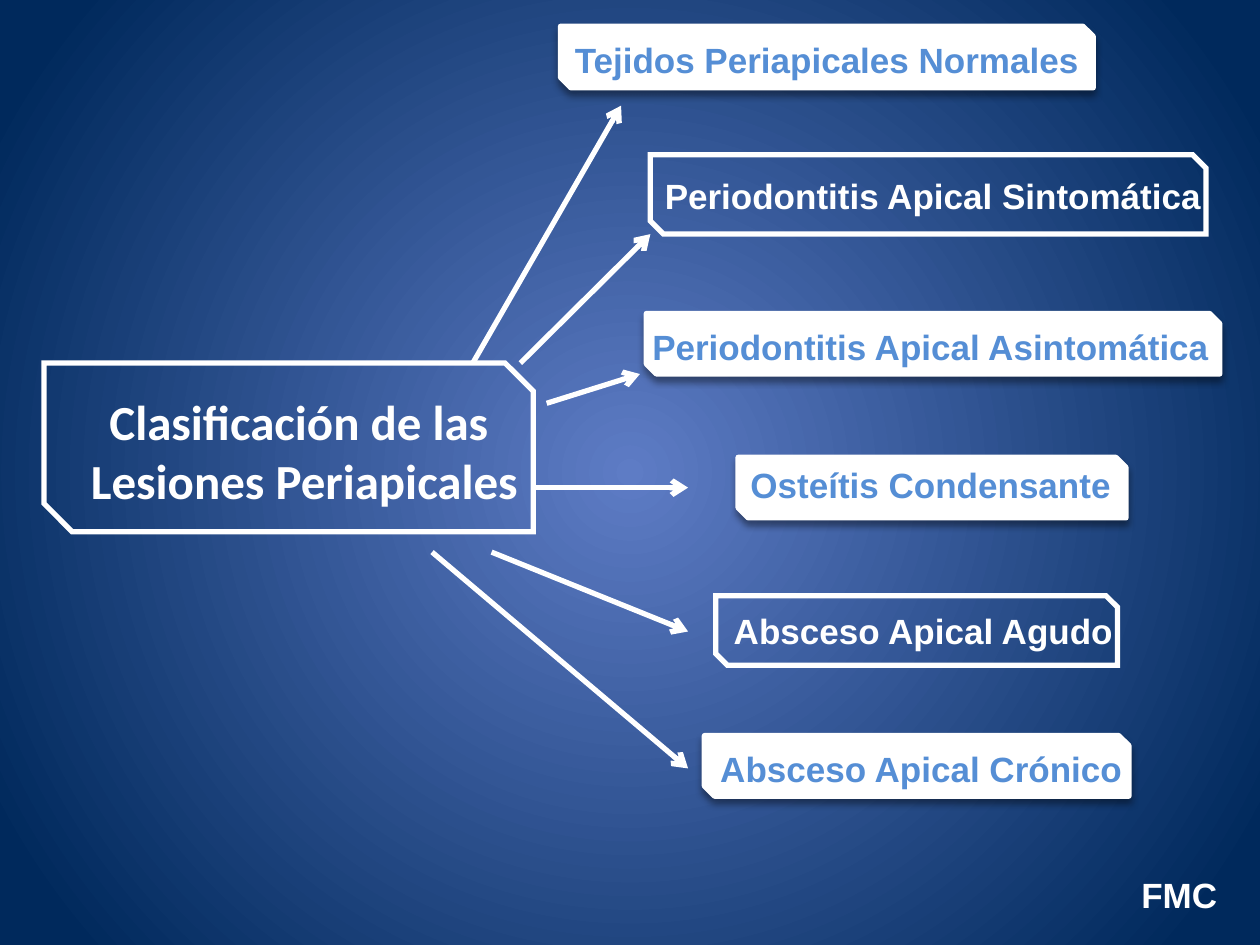
from lxml.etree import SubElement
from pptx import Presentation
from pptx.dml.color import RGBColor
from pptx.enum.shapes import MSO_CONNECTOR, MSO_SHAPE
from pptx.enum.text import MSO_ANCHOR, MSO_AUTO_SIZE, PP_ALIGN
from pptx.oxml.ns import qn
from pptx.util import Cm, Pt

WHITE, BLUE = "FFFFFF", "558ED5"
LEFT, MID, RIGHT = PP_ALIGN.LEFT, PP_ALIGN.CENTER, PP_ALIGN.RIGHT
GLOW = [(0, "5E7CC5"), (0.92, "00295C")]

# Lengths in cm: left, top, width, height
TITLE = {
    "lines": ["Clasificación de las", " Lesiones Periapicales"],
    "box": (0.89, 7.32, 9.86, 3.4),
    "area": (1.3, 7.77, 9.45, 2.64),
}
# Label, solid box, box, text area, alignment, arrow from x, y to x, y
CLASSES = [
    ("Tejidos Periapicales Normales", True, (11.3, 0.53, 10.74, 1.24),
     (11.3, 0.66, 10.74, 1.12), MID, (9.53, 7.32, 12.52, 2.13)),
    ("Periodontitis Apical Sintomática", False, (13.11, 3.12, 11.2, 1.6),
     (13.11, 3.4, 11.4, 1.12), MID, (10.49, 7.32, 13.11, 4.72)),
    ("Periodontitis Apical Asintomática", True, (13.03, 6.32, 11.56, 1.22),
     (12.9, 6.43, 11.81, 1.12), LEFT, (11.02, 8.13, 12.9, 7.54)),
    ("Osteítis Condensante", True, (14.88, 9.22, 7.82, 1.22),
     (14.88, 9.22, 7.82, 1.12), LEFT, (10.8, 9.83, 13.87, 9.83)),
    ("Absceso Apical Agudo", False, (14.43, 12.01, 8.1, 1.4),
     (14.5, 12.17, 8.23, 1.12), MID, (9.91, 11.13, 13.87, 12.73)),
    ("Absceso Apical Crónico", True, (14.2, 14.83, 8.56, 1.22),
     (14.27, 14.94, 8.89, 1.12), LEFT, (8.71, 11.13, 13.87, 15.49)),
]
MARK = ("FMC", (22.58, 17.53, 2.21, 1.02))


def color(code):
    return RGBColor.from_string(code)


def cms(nums):
    return [Cm(n) for n in nums]


def add(node, tag, **attrs):
    return SubElement(node, qn(tag), attrs)


def stroke(item):
    item.line.color.rgb = color(WHITE)
    item.line.width = Pt(3)


def paint(slide):
    """Fill the background with a glow from the centre."""
    fill = slide.background.fill
    fill.gradient()
    for stop, (pos, code) in zip(fill.gradient_stops, GLOW):
        stop.position = pos
        stop.color.rgb = color(code)
    grad = slide.element.find(".//" + qn("a:gradFill"))
    grad.remove(grad.find(qn("a:lin")))
    node = add(grad, "a:path", path="circle")
    add(node, "a:fillToRect", l="50000", t="50000", r="50000", b="50000")


def frame(slide, place, solid=False):
    """Draw a snipped box: white with a shadow, or outline only."""
    box = slide.shapes.add_shape(MSO_SHAPE.SNIP_2_DIAG_RECTANGLE, *cms(place))
    box.shadow.inherit = False
    stroke(box)
    props = box.element.spPr
    if solid:
        box.fill.solid()
        box.fill.fore_color.rgb = color(WHITE)
        shade = add(props.find(qn("a:effectLst")), "a:outerShdw",
                    blurRad=str(Pt(4)), dist=str(Pt(3)), dir="5400000",
                    rotWithShape="0")
        add(add(shade, "a:srgbClr", val="000000"), "a:alpha", val="40000")
    else:
        box.fill.background()
        add(props.find(qn("a:ln")), "a:miter", lim="800000")


def write(slide, lines, place, code, align=MID, size=20, name="Arial", **form):
    frame = slide.shapes.add_textbox(*cms(place)).text_frame
    look = {"word_wrap": False, "auto_size": MSO_AUTO_SIZE.SHAPE_TO_FIT_TEXT}
    for key, val in {**look, **form}.items():
        setattr(frame, key, val)
    for num, line in enumerate(lines):
        para = frame.add_paragraph() if num else frame.paragraphs[0]
        para.alignment = align
        run = para.add_run()
        run.text = line
        for key, val in {"size": Pt(size), "name": name, "bold": True}.items():
            setattr(run.font, key, val)
        run.font.color.rgb = color(code)


def arrow(slide, ends):
    link = slide.shapes.add_connector(MSO_CONNECTOR.STRAIGHT, *cms(ends))
    stroke(link)
    props = link.element.spPr
    add(props.find(qn("a:ln")), "a:tailEnd", type="arrow")
    add(props, "a:effectLst")


def main():
    deck = Presentation()
    deck.slide_width, deck.slide_height = cms((25.4, 19.05))
    slide = deck.slides.add_slide(deck.slide_layouts[6])
    paint(slide)
    frame(slide, TITLE["box"])
    write(slide, TITLE["lines"], TITLE["area"], WHITE, size=28, name="Calibri")
    for label, solid, box, area, align, ends in CLASSES:
        frame(slide, box, solid)
        write(slide, [label], area, BLUE if solid else WHITE, align)
        arrow(slide, ends)
    text, area = MARK
    write(slide, [text], area, WHITE, RIGHT, word_wrap=True,
          auto_size=MSO_AUTO_SIZE.NONE, vertical_anchor=MSO_ANCHOR.MIDDLE)
    deck.save("out.pptx")


if __name__ == "__main__":
    main()
